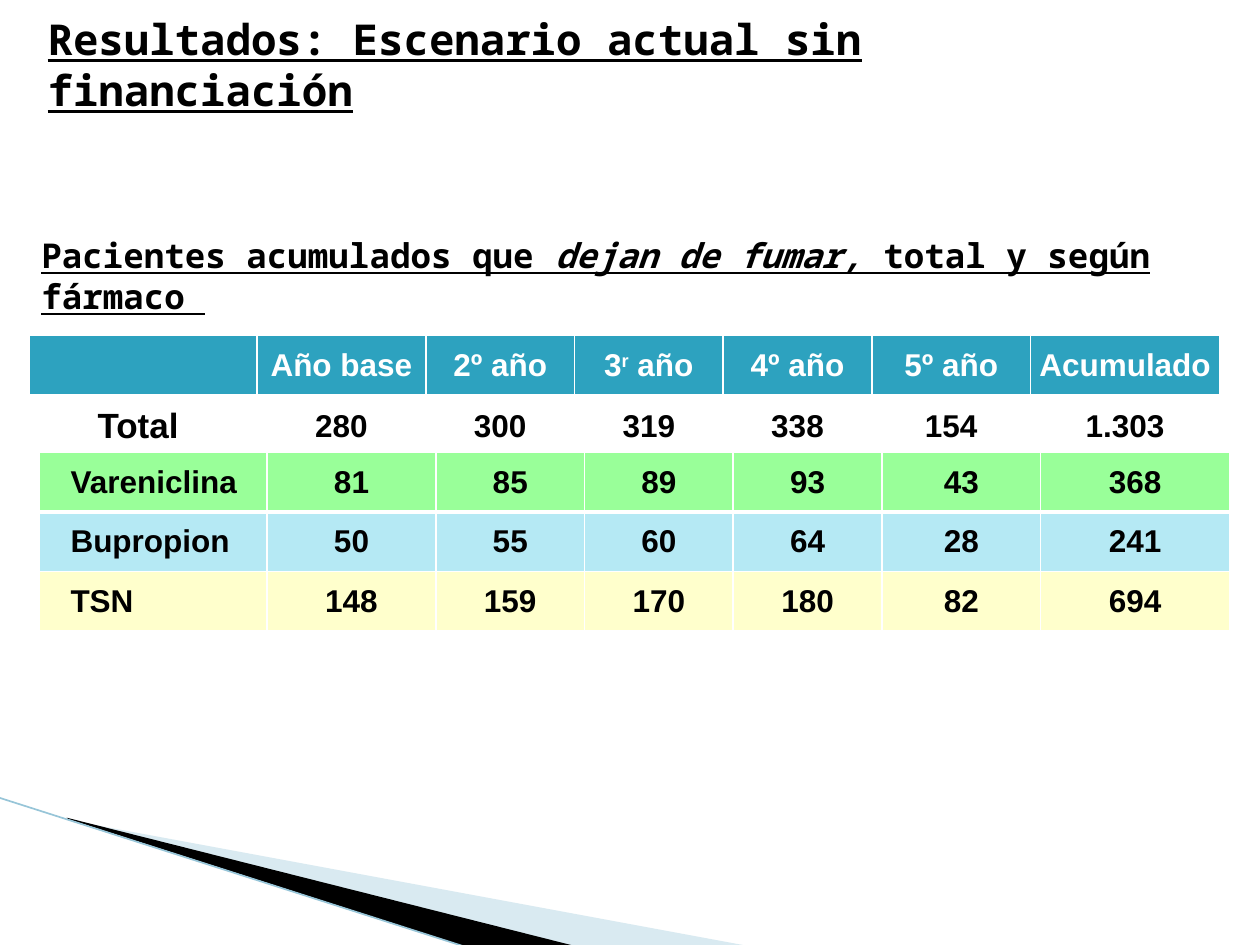
from lxml.etree import SubElement
from pptx import Presentation
from pptx.dml.color import RGBColor
from pptx.enum.shapes import MSO_CONNECTOR
from pptx.enum.text import MSO_ANCHOR, PP_ALIGN
from pptx.oxml import parse_xml
from pptx.oxml.ns import nsdecls, qn
from pptx.util import Inches, Pt

COLORS = {
    "black": "000000", "white": "FFFFFF", "header": "2DA2BF",
    "green": "99FF99", "blue": "B5E9F4", "yellow": "FFFFCC",
    "wedge": "A0CBDC", "edge": "97C5D8",
}
HEADING = {"name": "Noto Sans Mono", "bold": True, "underline": True}
CELL = {"name": "Arial", "size": Pt(18), "bold": True}
COL_WIDTHS = [1.81, 1.34, 1.18, 1.18, 1.18, 1.26, 1.5]

SUMMARY = [
    {"fill": "header", "color": "white", "bottom": 3,
     "values": ["", "Año base", "2º año", "3^r^ año", "4º año", "5º año", "Acumulado"]},
    {"fill": None, "color": "black", "bottom": 1, "label_size": 20,
     "values": ["Total ", "280", "300", "319", "338", "154", "1.303"]},
]
BY_DRUG = [
    {"fill": "green", "color": "black", "bottom": 3,
     "values": ["Vareniclina", "81", "85", "89", "93", "43", "368"]},
    {"fill": "blue", "color": "black", "bottom": 1,
     "values": ["Bupropion", "50", "55", "60", "64", "28", "241"]},
    {"fill": "yellow", "color": "black", "bottom": 1,
     "values": ["TSN", "148", "159", "170", "180", "82", "694"]},
]


def rgb(name):
    """Return the named colour."""
    return RGBColor.from_string(COLORS[name])


def add_run(p, text, color, **formats):
    """Add a run with the given font values."""
    r = p.add_run()
    r.text = text
    r.font.color.rgb = rgb(color)
    for key, value in formats.items():
        setattr(r.font, key, value)
    return r


def add_heading(s, box, size, parts):
    """Add an underlined heading made of (text, italic) parts."""
    tf = s.shapes.add_textbox(*map(Inches, box)).text_frame
    tf.word_wrap = True
    tf.vertical_anchor = MSO_ANCHOR.MIDDLE
    for text, italic in parts:
        add_run(tf.paragraphs[0], text, "black", size=Pt(size), italic=italic, **HEADING)


def set_borders(cell, bottom):
    """Draw white borders with the given bottom width in points."""
    tc_pr = cell._tc.get_or_add_tcPr()
    for i, (side, width) in enumerate(zip("LRTB", (1, 1, 1, bottom))):
        tc_pr.insert(i, parse_xml(
            f'<a:ln{side} {nsdecls("a")} w="{Pt(width)}"><a:solidFill>'
            f'<a:srgbClr val="{COLORS["white"]}"/></a:solidFill></a:ln{side}>'))


def fill_cell(cell, text, row, size, indent, align):
    """Format one cell; carets enclose superscript text."""
    if row["fill"]:
        cell.fill.solid()
        cell.fill.fore_color.rgb = rgb(row["fill"])
    else:
        cell.fill.background()
    layout = {"margin_left": Inches(indent), "margin_right": 0, "margin_top": 0,
              "margin_bottom": 0, "vertical_anchor": MSO_ANCHOR.MIDDLE}
    for key, value in layout.items():
        setattr(cell, key, value)
    set_borders(cell, row["bottom"])
    p = cell.text_frame.paragraphs[0]
    p.alignment = align
    for i, part in enumerate(text.split("^")):
        if part:
            r = add_run(p, part, row["color"], **{**CELL, "size": Pt(size)})
            if i % 2:
                r.font._element.set("baseline", "30000")


def add_data_table(s, box, rows, label_indent, label_align):
    """Add a table of patients whose first column holds labels."""
    table = s.shapes.add_table(len(rows), len(COL_WIDTHS), *map(Inches, box)).table
    table.first_row = table.horz_banding = False
    for col, width in zip(table.columns, COL_WIDTHS):
        col.width = Inches(width)
    for i, row in enumerate(rows):
        table.rows[i].height = Inches(box[3] / len(rows))
        for j, text in enumerate(row["values"]):
            size = row.get("label_size", 18) if j == 0 else 18
            indent, align = (label_indent, label_align) if j == 0 else (0, PP_ALIGN.CENTER)
            fill_cell(table.cell(i, j), text, row, size, indent, align)


def add_wedge(s, points, color, alpha=100):
    """Add a filled outline through the given points."""
    points = [tuple(map(Inches, point)) for point in points]
    builder = s.shapes.build_freeform(*points[0])
    builder.add_line_segments(points[1:], close=True)
    sp = builder.convert_to_shape()
    sp.shadow.inherit = False
    sp.line.fill.background()
    sp.fill.solid()
    sp.fill.fore_color.rgb = rgb(color)
    if alpha < 100:
        clr = next(sp._element.spPr.iter(qn("a:srgbClr")))
        SubElement(clr, qn("a:alpha"), val=str(alpha * 1000))


def add_corner(s, left, top, right, bottom):
    """Add the wedges and edge line in the lower left corner."""
    add_wedge(s, [(left + 0.56, top + 0.18), (right, bottom - 0.01),
                  (left + 4.57, bottom - 0.01), (left + 0.56, top + 0.17)], "wedge", 40)
    add_wedge(s, [(left + 0.54, top + 0.16), (left + 4.58, bottom - 0.01),
                  (left + 3.73, bottom), (left + 0.55, top + 0.17)], "black")
    line = s.shapes.add_connector(
        MSO_CONNECTOR.STRAIGHT, *map(Inches, (left, top, left + 3.72, bottom)))
    line.line.color.rgb = rgb("edge")
    line.line.width = Pt(0.95)
    SubElement(line._element.spPr, qn("a:effectLst"))


def main():
    """Build and save the slide."""
    prs = Presentation()
    prs.slide_width, prs.slide_height = Inches(10), Inches(7.5)
    s = prs.slides.add_slide(prs.slide_layouts[6])
    add_corner(s, -0.01, 6.33, 5.95, 7.52)
    add_heading(s, (0.28, 0.19, 9, 0.63), 24.3,
                [("Resultados: Escenario actual sin financiación", False)])
    add_heading(s, (0.23, 1.95, 9.37, 0.47), 19.5,
                [("Pacientes acumulados que ", False), ("dejan de fumar, ", True),
                 ("total y según fármaco ", False)])
    add_data_table(s, (0.23, 2.66, 9.45, 0.97), SUMMARY, 0, PP_ALIGN.CENTER)
    add_data_table(s, (0.31, 3.59, 9.45, 1.42), BY_DRUG, 0.25, PP_ALIGN.LEFT)
    prs.save("out.pptx")


if __name__ == "__main__":
    main()
